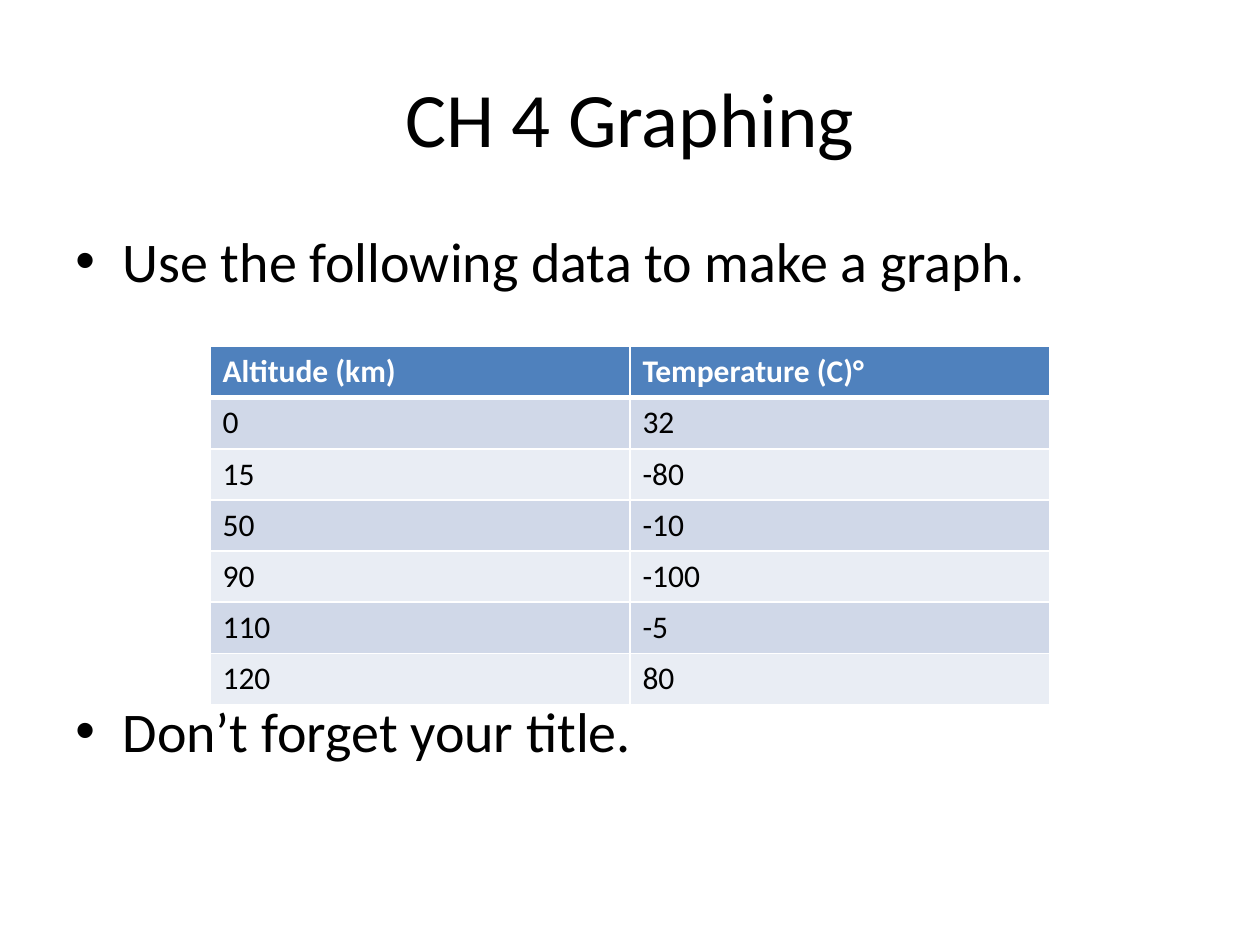
from dataclasses import dataclass

from lxml.etree import SubElement
from pptx import Presentation
from pptx.dml.color import RGBColor as Rgb
from pptx.enum.text import MSO_ANCHOR as Anchor, PP_ALIGN as Align
from pptx.oxml import parse_xml
from pptx.oxml.ns import nsdecls, qn
from pptx.util import Pt

SCALE = 9525  # EMU in one px, at 96 px to the inch


def px(n):
    return n * SCALE


@dataclass(frozen=True)
class Theme:
    font: str = "Calibri"
    ink: str = "000000"
    paper: str = "FFFFFF"
    head: str = "4F81BD"
    bands: tuple = ("D0D8E8", "E9EDF4")
    title: int = 44
    body: int = 32
    cell: int = 18


class Deck:
    def __init__(self, theme):
        self.theme = theme
        self.prs = Presentation()
        self.prs.slide_width, self.prs.slide_height = px(960), px(720)
        self.slide = self.prs.slides.add_slide(self.prs.slide_layouts[6])

    def label(self, para, text, size, color, bold=False):
        run = para.add_run()
        run.text = text
        look = {"name": self.theme.font, "size": Pt(size), "bold": bold}
        for key, val in look.items():
            setattr(run.font, key, val)
        run.font.color.rgb = Rgb.from_string(color)

    def frame(self, box, anchor):
        frame = self.slide.shapes.add_textbox(*map(px, box)).text_frame
        frame.word_wrap = True
        frame.vertical_anchor = anchor
        return frame

    def title(self, box, text):
        para = self.frame(box, Anchor.MIDDLE).paragraphs[0]
        para.alignment = Align.CENTER
        self.label(para, text, self.theme.title, self.theme.ink)

    def bullets(self, box, items, gap, indent):
        """Bulleted lines, gap points apart, with a hanging indent."""
        frame = self.frame(box, Anchor.TOP)
        for i, text in enumerate(items):
            para = frame.add_paragraph() if i else frame.paragraphs[0]
            para.space_before = Pt(gap if i else 0)
            props = para._p.get_or_add_pPr()
            props.set("marL", str(px(indent)))
            props.set("indent", str(-px(indent)))
            SubElement(props, qn("a:buFont")).set("typeface", "Arial")
            SubElement(props, qn("a:buChar")).set("char", "•")
            self.label(para, text, self.theme.body, self.theme.ink)

    def edge(self, cell, widths):
        """Cell borders: widths in points for left, right, top, bottom."""
        props = cell._tc.get_or_add_tcPr()
        for i, (side, width) in enumerate(zip("LRTB", widths)):
            props.insert(i, parse_xml(
                f'<a:ln{side} {nsdecls("a")} w="{Pt(width)}"><a:solidFill>'
                f'<a:srgbClr val="{self.theme.paper}"/>'
                f'</a:solidFill></a:ln{side}>'))

    def table(self, left, top, col, row, data):
        theme = self.theme
        rows, cols = len(data), len(data[0])
        grid = self.slide.shapes.add_table(
            rows, cols, px(left), px(top), px(col * cols), px(row * rows)).table
        grid.horz_banding = False
        for r, line in enumerate(data):
            head = r == 0
            fill = theme.head if head else theme.bands[(r - 1) % 2]
            ink = theme.paper if head else theme.ink
            for c, text in enumerate(line):
                cell = grid.cell(r, c)
                cell.fill.solid()
                cell.fill.fore_color.rgb = Rgb.from_string(fill)
                self.edge(cell, (1, 1, 3 if r == 1 else 1, 3 if head else 1))
                self.label(cell.text_frame.paragraphs[0], text,
                           theme.cell, ink, head)


def main():
    deck = Deck(Theme())
    deck.title((48, 29, 864, 120), "CH 4 Graphing")
    deck.bullets((48, 168, 864, 475),
                 ["Use the following data to make a graph.",
                  "Don’t forget your title."], gap=230, indent=36)
    deck.table(160, 264, col=320, row=39, data=[
        ("Altitude (km)", "Temperature (C)°"),
        ("0", "32"),
        ("15", "-80"),
        ("50", "-10"),
        ("90", "-100"),
        ("110", "-5"),
        ("120", "80"),
    ])
    deck.prs.save("out.pptx")


if __name__ == "__main__":
    main()
